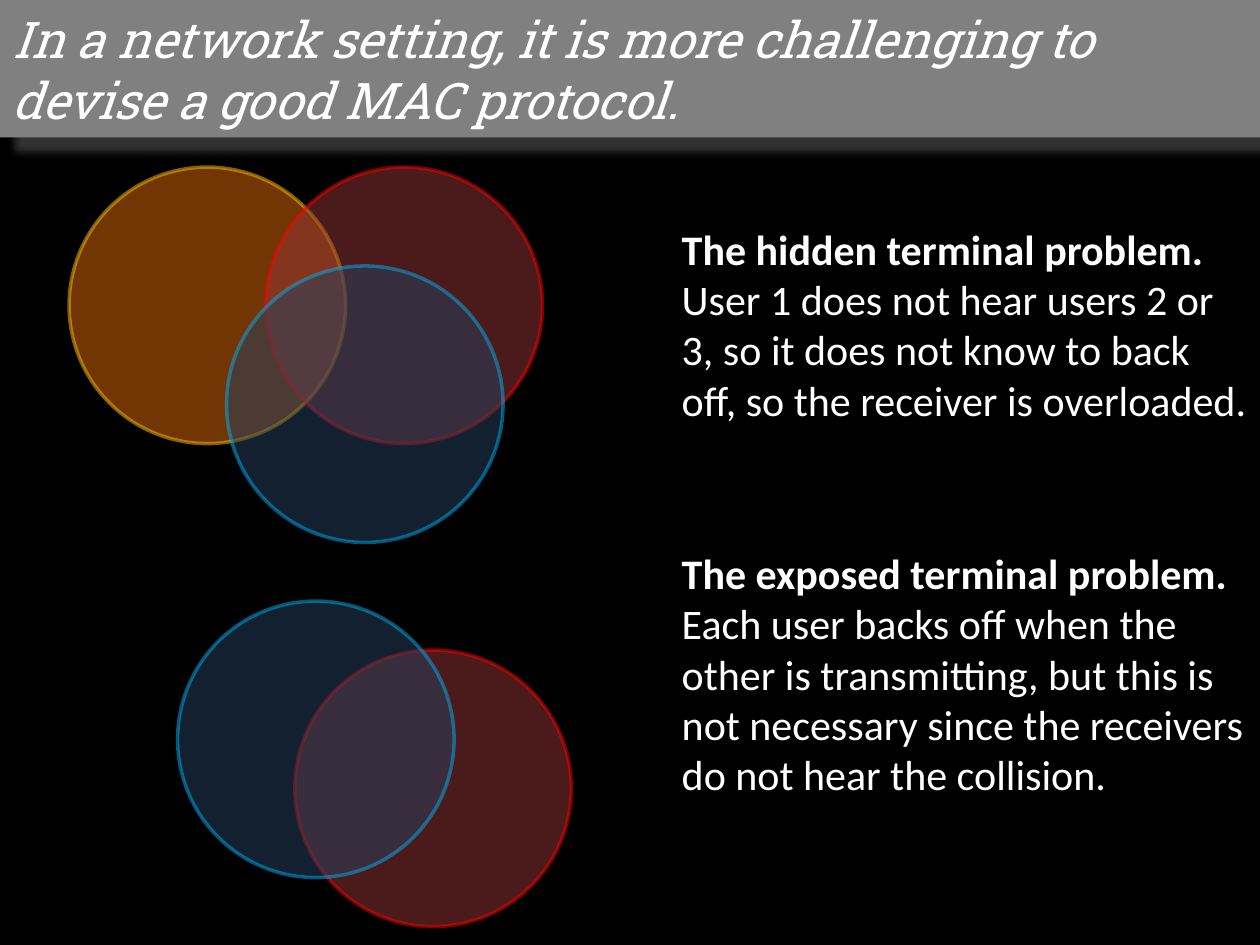
import pptx
import pptx.util
import pptx.dml.color
import pptx.enum.shapes
import pptx.enum.text
import pptx.oxml
import pptx.oxml.ns
import lxml.etree

Pt = pptx.util.Pt
RGBColor = pptx.dml.color.RGBColor
qn = pptx.oxml.ns.qn

BLACK = RGBColor(0x00, 0x00, 0x00)
WHITE = RGBColor(0xFF, 0xFF, 0xFF)
GRAY = RGBColor(0x80, 0x80, 0x80)
ORANGE = RGBColor(0xE4, 0x6C, 0x0A)
GOLD = RGBColor(0xFF, 0xC0, 0x00)
MAROON = RGBColor(0x95, 0x37, 0x35)
RED = RGBColor(0xFF, 0x00, 0x00)
NAVY = RGBColor(0x25, 0x40, 0x61)
SKY = RGBColor(0x00, 0xB0, 0xF0)

DIAMETER = 158
SHADOW = f"""
<a:effectLst {pptx.oxml.ns.nsdecls("a")}>
  <a:outerShdw blurRad="{Pt(4)}" dist="{Pt(11)}" dir="2700000" algn="tl" rotWithShape="0">
    <a:srgbClr val="{GRAY}"><a:alpha val="40000"/></a:srgbClr>
  </a:outerShdw>
</a:effectLst>"""


def make_half_transparent(fill):
    color = fill._xPr.find(f"{qn('a:solidFill')}/{qn('a:srgbClr')}")
    lxml.etree.SubElement(color, qn("a:alpha")).set("val", "50000")


prs = pptx.Presentation()
prs.slide_width, prs.slide_height = Pt(720), Pt(540)
s = prs.slides.add_slide(prs.slide_layouts[6])
s.background.fill.solid()
s.background.fill.fore_color.rgb = BLACK

# Title band
sp = s.shapes.add_shape(pptx.enum.shapes.MSO_SHAPE.RECTANGLE, 0, 0, Pt(720), Pt(78.5))
sp.fill.solid()
sp.fill.fore_color.rgb = GRAY
sp.line.fill.background()
sp._element.spPr.append(pptx.oxml.parse_xml(SHADOW))
tf = sp.text_frame
tf.word_wrap = True
tf.vertical_anchor = pptx.enum.text.MSO_ANCHOR.MIDDLE
p = tf.paragraphs[0]
p.text = "In a network setting, it is more challenging to devise a good MAC protocol."
p.alignment = pptx.enum.text.PP_ALIGN.LEFT
p.font.name = "Roboto Slab"
p.font.size = Pt(28.8)
p.font.italic = True
p.font.color.rgb = WHITE

# Explanations: heading, body, space before
problems = [
    ("The hidden terminal problem.",
     " User 1 does not hear users 2 or 3, so it does not know to back off, "
     "so the receiver is overloaded.", 4),
    ("The exposed terminal problem.",
     " Each user backs off when the other is transmitting, but this is not "
     "necessary since the receivers do not hear the collision.", 70),
]
tf = s.shapes.add_textbox(Pt(382.5), Pt(124), Pt(337.5), Pt(416)).text_frame
tf.word_wrap = True
for i, (heading, body, gap) in enumerate(problems):
    p = tf.add_paragraph() if i else tf.paragraphs[0]
    p.space_before = Pt(gap)
    p.font.name = "Calibri"
    p.font.size = Pt(24)
    p.font.color.rgb = WHITE
    r = p.add_run()
    r.text = heading
    r.font.bold = True
    p.add_run().text = body

# Radio ranges: left, top, fill, outline
ranges = [
    (39.5, 95.5, ORANGE, GOLD),
    (152, 95.5, MAROON, RED),
    (129.5, 152, NAVY, SKY),
    (168.5, 371.5, MAROON, RED),
    (101.5, 343.5, NAVY, SKY),
]
for left, top, fill, outline in ranges:
    sp = s.shapes.add_shape(pptx.enum.shapes.MSO_SHAPE.OVAL,
                            Pt(left), Pt(top), Pt(DIAMETER), Pt(DIAMETER))
    sp.shadow.inherit = False
    sp.line.width = Pt(2)
    for paint, color in ((sp.fill, fill), (sp.line.fill, outline)):
        paint.solid()
        paint.fore_color.rgb = color
        make_half_transparent(paint)

prs.save("out.pptx")
